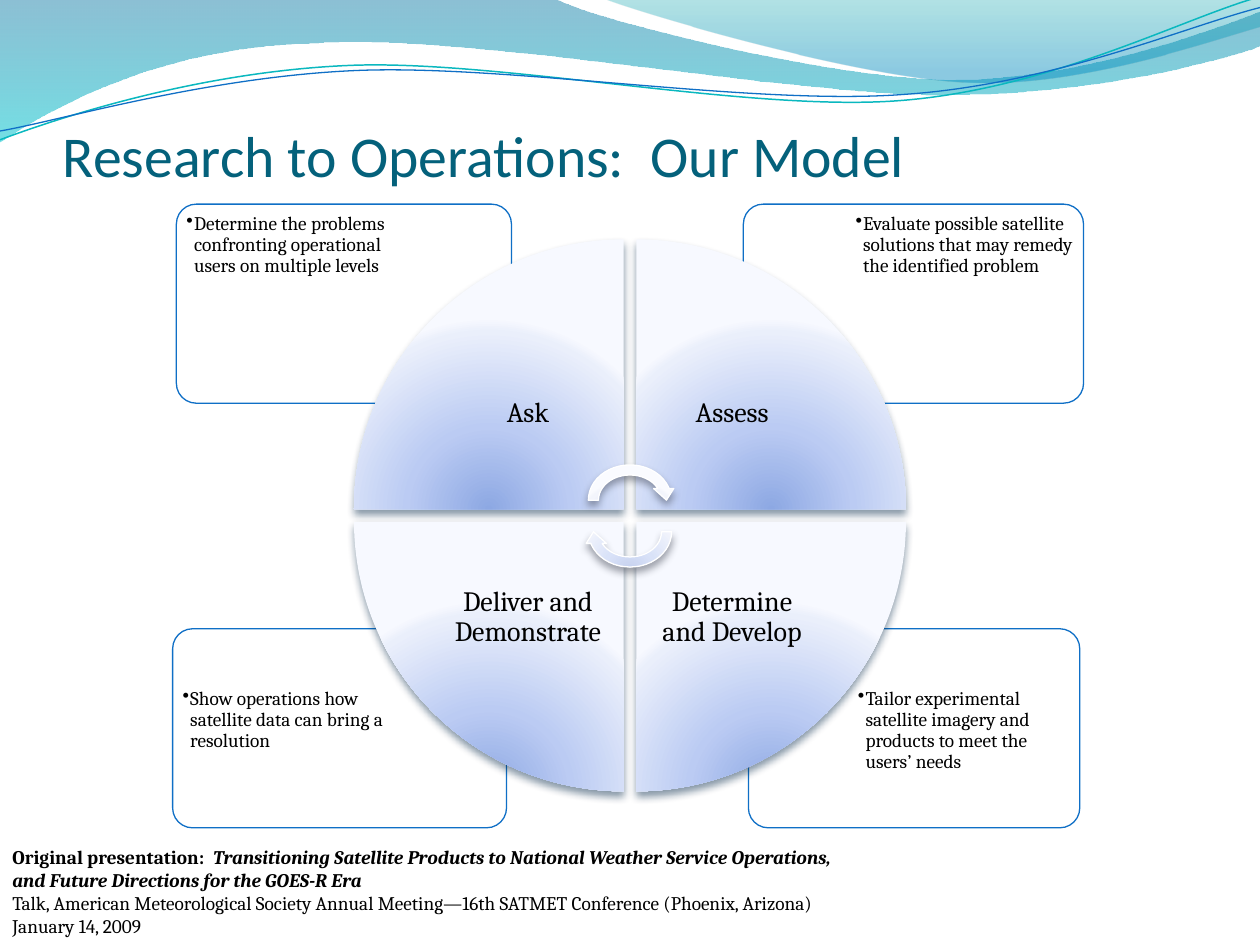
from lxml import etree
from pptx import Presentation, util as u
from pptx.dml.color import RGBColor
from pptx.enum import shapes, text
from pptx.oxml.ns import nsdecls, qn

COLORS = {
    "title": "04617B", "ink": "000000", "card": "FFFFFF", "rim": "0F6FC6",
    "teal": "0AB8BF", "wedge shadow": "042747", "arrow shadow": "3C414F",
}
# Gradient stops: position %, colour, opacity %
WAVE_STOPS = [(0, "0074A1", 45), (100, "00C6CF", 55)]
CREST_STOPS = [(0, "00A1A9", 30), (80, "008BBF", 45)]
WEDGE_STOPS = [(0, "8DA8E3", 100), (43, "BBCBF3", 100), (93, "EAEFFB", 100), (100, "F7F9FF", 100)]
ARROW_STOPS = [(0, "C5D0EE", 100), (43, "D9E2F8", 100), (93, "F3F5FC", 100), (100, "FAFBFF", 100)]

# Outlines: a pair is a straight line to a point, six numbers a Bezier curve
WAVE = [(0, 0), (4.4, -0.01), (4.76, 0.17, 6.64, 0.63, 7.58, 0.63),
        (8.53, 0.63, 9.58, 0.26, 10, 0.09), (10.01, 0.36),
        (9.83, 0.44, 8.7, 0.76, 7.46, 0.75), (6.22, 0.75, 3.82, 0.28, 2.57, 0.34),
        (1.29, 0.36, 0.46, 0.83, -0.01, 1.13), (0, 0)]
CREST = [(4.79, -0.01), (5.09, 0.11, 6.82, 0.62, 7.69, 0.65),
         (8.56, 0.69, 9.61, 0.32, 10, 0.21), (10, 0), (4.79, -0.01)]
RIPPLES = [
    ("teal", 0.85, [(0, 1.11), (0.48, 0.93, 1.58, 0.57, 2.77, 0.52),
                    (3.95, 0.47, 5.93, 0.89, 7.13, 0.8), (8.33, 0.71, 9.38, 0.15, 9.98, -0.02)]),
    ("rim", 0.75, [(0, 1.04), (0.47, 0.96, 1.64, 0.61, 2.83, 0.56),
                   (4.03, 0.51, 5.97, 0.84, 7.17, 0.75), (8.36, 0.67, 9.41, 0.21, 10, 0.06)]),
]

TITLE = "Research to Operations:  Our Model"
# Card box, note box, note
CARDS = [
    ((5.94, 4.99, 2.63, 1.58), (6.76, 5.42, 1.77, 1.12),
     "Tailor experimental satellite imagery and products to meet the users’ needs"),
    ((1.37, 4.99, 2.65, 1.58), (1.4, 5.42, 1.78, 1.12),
     "Show operations how satellite data can bring a resolution"),
    ((5.9, 1.62, 2.7, 1.58), (6.74, 1.65, 1.84, 1.12),
     "Evaluate possible satellite solutions that may remedy the identified problem"),
    ((1.4, 1.62, 2.66, 1.58), (1.43, 1.65, 1.79, 1.12),
     "Determine the problems confronting operational users on multiple levels"),
]
# Clockwise from top left: label, column side, row side
STAGES = [("Ask", -1, -1), ("Assess", 1, -1),
          ("Determine and Develop", 1, 1), ("Deliver and Demonstrate", -1, 1)]
# Paragraphs of (text, bold, italic)
CITATION = [
    [("Original presentation:  ", True, False),
     ("Transitioning Satellite Products to National Weather Service Operations,", True, True)],
    [("and Future Directions for the GOES-R Era", True, True), "break",
     ("Talk, American Meteorological Society Annual Meeting—16th SATMET Conference "
      "(Phoenix, Arizona)", False, False), "break",
     ("January 14, 2009", False, False)],
]

HUB_X, HUB_Y, HALF_GAP, WEDGE, LABEL = 5, 4.09, 0.05, 2.14, 1.52

prs = Presentation()
prs.slide_width, prs.slide_height = u.Inches(10), u.Inches(7.5)
slide = prs.slides.add_slide(prs.slide_layouts[6])


def color_xml(value, opacity):
    return f'<a:srgbClr val="{value}"><a:alpha val="{opacity * 1000}"/></a:srgbClr>'


def set_fill(shape, content):
    """Put a fill, given as XML, in place of the shape's own."""
    shape.fill.background()
    properties = shape._element.spPr
    properties.replace(properties.find(qn("a:noFill")), etree.fromstring(content))


def set_gradient(shape, stops, radial=False):
    direction = ('<a:path path="circle"><a:fillToRect l="50000" t="130000" r="50000" b="-30000"/>'
                 '</a:path>' if radial else '<a:lin ang="5400000" scaled="0"/>')
    marks = "".join(f'<a:gs pos="{at * 1000}">{color_xml(value, opacity)}</a:gs>'
                    for at, value, opacity in stops)
    set_fill(shape, f'<a:gradFill {nsdecls("a")} rotWithShape="0">'
                    f'<a:gsLst>{marks}</a:gsLst>{direction}</a:gradFill>')


def set_line(shape, color, width=0.75):
    shape.line.color.rgb = RGBColor.from_string(COLORS[color])
    shape.line.width = u.Pt(width)


def set_shadow(shape, color):
    effects = shape._element.spPr.find(qn("a:effectLst"))
    effects.append(etree.fromstring(
        f'<a:outerShdw {nsdecls("a")} blurRad="{u.Pt(4.5)}" dist="{u.Pt(3)}" dir="5400000" '
        f'rotWithShape="0">{color_xml(COLORS[color], 48)}</a:outerShdw>'))


def add_shape(kind, box, rotation=0):
    shape = slide.shapes.add_shape(kind, *map(u.Inches, box))
    shape.shadow.inherit = False
    shape.rotation = rotation
    return shape


def add_outline(segments, close):
    """Lay all points as straight lines, then join each curve's three into a Bezier."""
    start, *rest = [tuple(map(u.Inches, segment[i:i + 2]))
                    for segment in segments for i in range(0, len(segment), 2)]
    builder = slide.shapes.build_freeform(*start)
    builder.add_line_segments(rest, close=close)
    outline = builder.convert_to_shape()
    outline.shadow.inherit = False
    lines = iter(list(outline._element.iter(qn("a:lnTo"))))
    for segment in segments[1:]:
        strokes = [next(lines) for _ in range(len(segment) // 2)]
        if len(strokes) == 3:
            curve = etree.Element(qn("a:cubicBezTo"))
            strokes[0].addprevious(curve)
            for stroke in strokes:
                curve.append(stroke[0])
                stroke.getparent().remove(stroke)
    return outline


def style_run(run, size, font="Cambria", color="ink"):
    run.font.size, run.font.name = u.Pt(size), font
    run.font.color.rgb = RGBColor.from_string(COLORS[color])


def add_text(box, content, size, insets, anchor=text.MSO_ANCHOR.TOP, **style):
    """Add a wrapped text box and return its first paragraph."""
    frame = slide.shapes.add_textbox(*map(u.Inches, box)).text_frame
    frame.word_wrap, frame.vertical_anchor = True, anchor
    frame.margin_left, frame.margin_top, frame.margin_right, frame.margin_bottom = map(
        u.Inches, insets)
    frame.text = content
    paragraph = frame.paragraphs[0]
    for run in paragraph.runs:
        style_run(run, size, **style)
    return paragraph


def add_bullet(paragraph):
    properties = paragraph._p.get_or_add_pPr()
    properties.set("lvl", "1")
    properties.set("marL", str(u.Inches(0.06)))
    properties.set("indent", str(u.Inches(-0.06)))
    etree.SubElement(properties, qn("a:buChar")).set("char", "••")


for segments, stops in ((WAVE, WAVE_STOPS), (CREST, CREST_STOPS)):
    band = add_outline(segments, close=True)
    set_gradient(band, stops)
    band.line.fill.background()
for color, width, segments in RIPPLES:
    ripple = add_outline(segments, close=False)
    ripple.fill.background()
    set_line(ripple, color, width)

add_text((0.5, 0.77, 9, 0.73), TITLE, 33, (0, 0.05, 0, 0), text.MSO_ANCHOR.BOTTOM,
         font="Calibri", color="title")

for card_box, note_box, note in CARDS:
    card = add_shape(shapes.MSO_SHAPE.ROUNDED_RECTANGLE, card_box)
    card.adjustments[0] = 0.1
    set_fill(card, f'<a:solidFill {nsdecls("a")}>{color_xml(COLORS["card"], 90)}</a:solidFill>')
    set_line(card, "rim")
    line = add_text(note_box, note, 11, (0.05,) * 4)
    line.line_spacing = 0.9
    add_bullet(line)


def quadrant_box(column, row, size):
    """Square that touches the hub's gap with its inner corner."""
    return [hub + (HALF_GAP if side > 0 else -HALF_GAP - size)
            for hub, side in ((HUB_X, column), (HUB_Y, row))] + [size, size]


for turn, (stage, column, row) in enumerate(STAGES):
    wedge = add_shape(shapes.MSO_SHAPE.PIE_WEDGE, quadrant_box(column, row, WEDGE), turn * 90)
    set_gradient(wedge, WEDGE_STOPS, radial=True)
    wedge.line.fill.background()
    set_shadow(wedge, "wedge shadow")
    label = add_text(quadrant_box(column, row, LABEL), stage, 16, (0.12,) * 4,
                     text.MSO_ANCHOR.MIDDLE)
    label.alignment, label.line_spacing = text.PP_ALIGN.CENTER, 0.9

for top, rotation in ((3.65, 0), (3.9, 180)):
    arrow = add_shape(shapes.MSO_SHAPE.CIRCULAR_ARROW, (4.63, top, 0.74, 0.64), rotation)
    set_gradient(arrow, ARROW_STOPS, radial=True)
    set_line(arrow, "card")
    set_shadow(arrow, "arrow shadow")

citation = slide.shapes.add_textbox(*map(u.Inches, (0, 6.66, 7.17, 0.84))).text_frame
citation.word_wrap = True
for index, pieces in enumerate(CITATION):
    paragraph = citation.add_paragraph() if index else citation.paragraphs[0]
    for piece in pieces:
        if piece == "break":
            paragraph.add_line_break()
            continue
        run = paragraph.add_run()
        run.text, run.font.bold, run.font.italic = piece
        style_run(run, 11)

prs.save("out.pptx")
